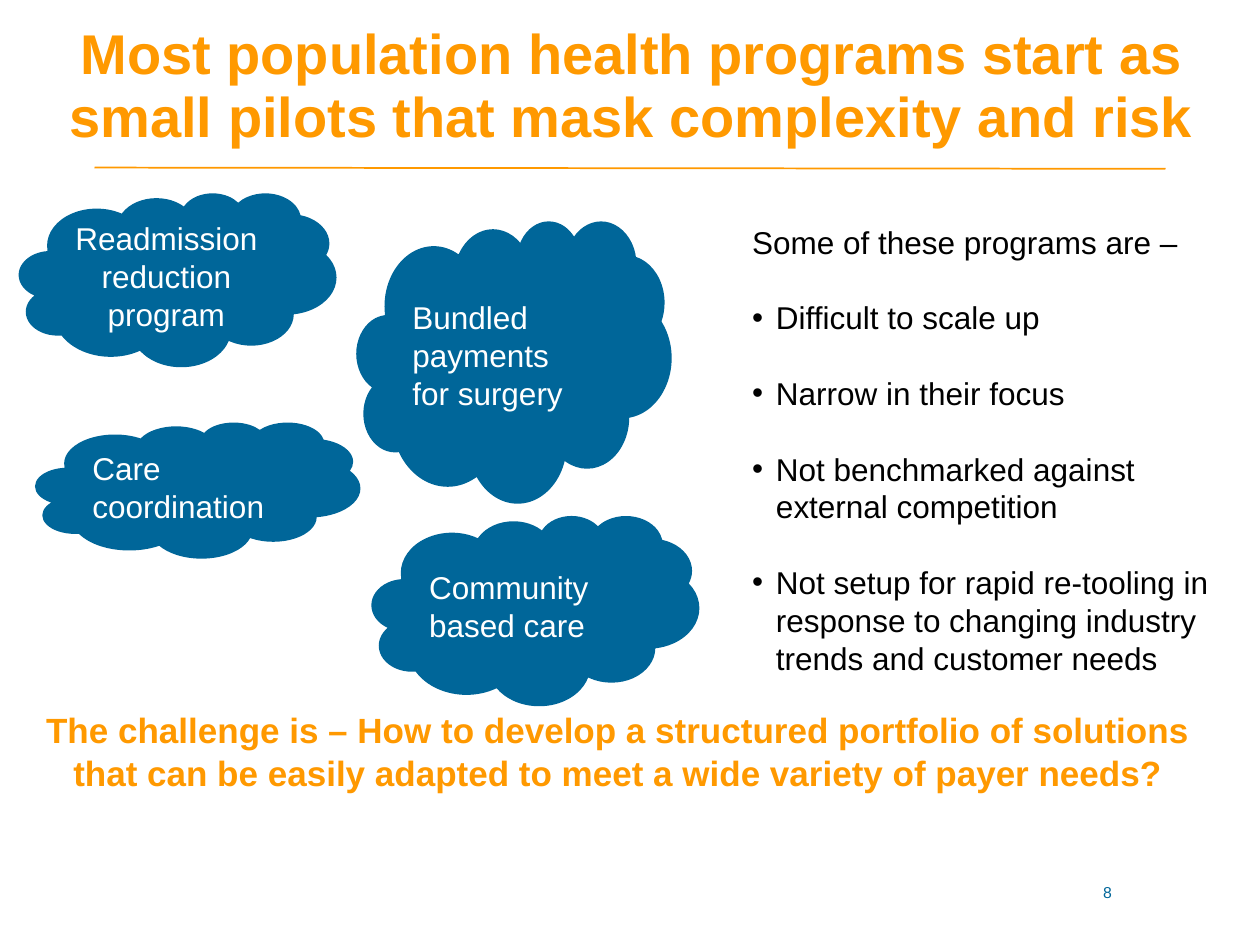
from lxml import etree
from pptx import Presentation
from pptx import util as u
from pptx.dml.color import RGBColor
from pptx.enum import shapes, text
from pptx.oxml.ns import qn

WIDE, HIGH = 10, 7.5
ORANGE, BLUE, WHITE, BLACK = "FF9900", "006699", "FFFFFF", "000000"
LEFT, MID = text.PP_ALIGN.LEFT, text.PP_ALIGN.CENTER

# Left, top, width, height, label, alignment
CLOUDS = [
    (2.83, 1.75, 2.5, 2.24, "Bundled payments for surgery", LEFT),
    (2.95, 4.09, 2.6, 1.51, "Community based care", LEFT),
    (0.28, 3.35, 2.58, 1.08, "Care coordination", LEFT),
    (0.15, 1.53, 2.52, 1.38, "Readmission reduction program", MID),
]
POINTS = [
    "Difficult to scale up",
    "Narrow in their focus",
    "Not benchmarked against external competition",
    "Not setup for rapid re-tooling in response to changing industry "
    "trends and customer needs",
]


def color(code):
    return RGBColor.from_string(code)


def inch(*sizes):
    return [u.Inches(size) for size in sizes]


def style(para, size, code, align=LEFT, bold=False, lead=1.2):
    para.alignment = align
    para.line_spacing = u.Pt(round(size * lead, 1))
    font = para.font
    font.name, font.size, font.bold = "Arial", u.Pt(size), bold
    font.color.rgb = color(code)


def bullet(para):
    props = para._p.get_or_add_pPr()
    props.set("marL", str(u.Inches(0.19)))
    props.set("indent", str(u.Inches(-0.19)))
    etree.SubElement(props, qn("a:buFont")).set("typeface", "Arial")
    etree.SubElement(props, qn("a:buChar")).set("char", "•")


def add_title(slide, words):
    title = slide.shapes.title
    title.left, title.top, title.width, title.height = inch(0.28, 0, 9.47, 1.33)
    frame = title.text_frame
    frame.text = words
    frame.auto_size = text.MSO_AUTO_SIZE.NONE
    frame.vertical_anchor = text.MSO_ANCHOR.BOTTOM
    frame.margin_left = frame.margin_top = frame.margin_right = 0
    frame.margin_bottom = u.Inches(0.15)
    style(frame.paragraphs[0], 32, ORANGE, MID, True, lead=1.125)


def add_rule(slide):
    ends = inch(0.75, 1.33, WIDE - 0.75, 1.34)
    rule = slide.shapes.add_connector(shapes.MSO_CONNECTOR.STRAIGHT, *ends)
    rule.line.color.rgb = color(ORANGE)
    rule.line.width = u.Pt(1)
    etree.SubElement(rule._element.spPr, qn("a:effectLst"))


def add_cloud(slide, left, top, width, height, label, align):
    cloud = slide.shapes.add_shape(
        shapes.MSO_SHAPE.CLOUD, *inch(left, top, width, height))
    cloud.shadow.inherit = False
    cloud.fill.solid()
    cloud.fill.fore_color.rgb = color(BLUE)
    cloud.line.fill.background()
    frame = cloud.text_frame
    frame.text = label
    frame.word_wrap = True
    frame.vertical_anchor = text.MSO_ANCHOR.MIDDLE
    style(frame.paragraphs[0], 18, WHITE, align)


def add_text(slide, box, words, anchor=text.MSO_ANCHOR.TOP):
    frame = slide.shapes.add_textbox(*inch(*box)).text_frame
    frame.word_wrap = True
    frame.vertical_anchor = anchor
    frame.text = words
    return frame


def add_list(slide, lead, points):
    frame = add_text(slide, (5.87, 1.72, 4.08, 3.74), lead)
    style(frame.paragraphs[0], 18, BLACK)
    for point in points:
        para = frame.add_paragraph()
        para.text = point
        bullet(para)
        style(para, 18, BLACK)
        para.space_before = u.Pt(21.6)


def main():
    deck = Presentation()
    deck.slide_width, deck.slide_height = inch(WIDE, HIGH)
    slide = deck.slides.add_slide(deck.slide_layouts[5])

    # Heading
    add_rule(slide)
    add_title(slide, "Most population health programs start as small pilots "
                     "that mask complexity and risk")

    # Programs and their limits
    for cloud in CLOUDS:
        add_cloud(slide, *cloud)
    add_list(slide, "Some of these programs are –", POINTS)

    # Closing question
    close = add_text(
        slide, (0.15, 5.42, 9.51, 1.08),
        "The challenge is – How to develop a structured portfolio of solutions "
        "that can be easily adapted to meet a wide variety of payer needs?",
        text.MSO_ANCHOR.MIDDLE)
    style(close.paragraphs[0], 20, ORANGE, MID, True)

    # Page number
    page = add_text(slide, (7.75, 6.96, 2.08, 0.4), "8")
    style(page.paragraphs[0], 9, BLUE, MID)

    deck.save("out.pptx")


if __name__ == "__main__":
    main()
